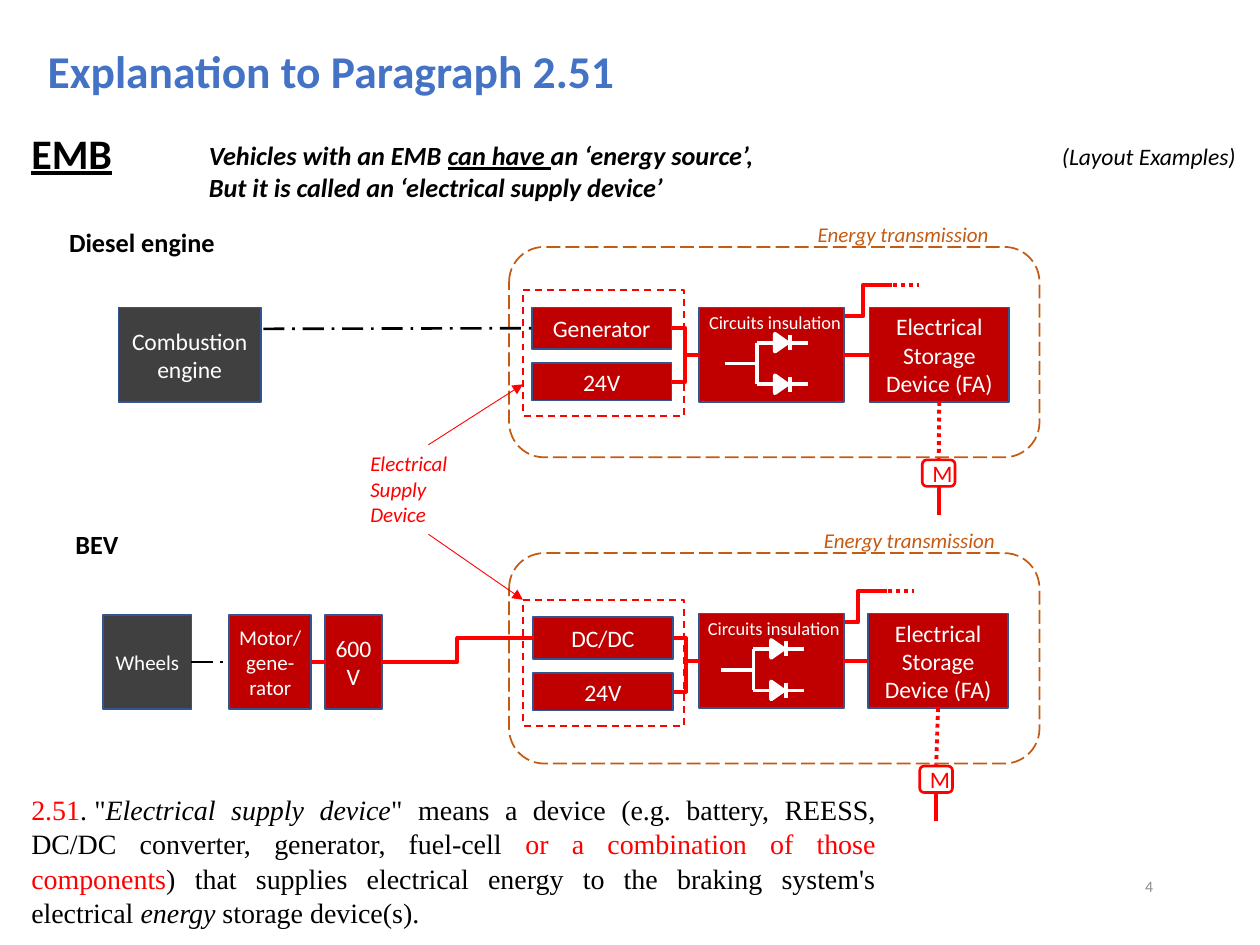
from lxml.etree import SubElement
from pptx import Presentation
from pptx.dml.color import RGBColor
from pptx.enum.dml import MSO_LINE
from pptx.enum.shapes import MSO_CONNECTOR, MSO_SHAPE
from pptx.enum.text import MSO_ANCHOR, MSO_AUTO_SIZE, PP_ALIGN
from pptx.oxml.ns import qn
from pptx.util import Inches, Pt

BLACK = RGBColor(0x00, 0x00, 0x00)
WHITE = RGBColor(0xFF, 0xFF, 0xFF)
RED = RGBColor(0xFF, 0x00, 0x00)
DARK_RED = RGBColor(0xC0, 0x00, 0x00)
DARK_GRAY = RGBColor(0x40, 0x40, 0x40)
PAGE_GRAY = RGBColor(0x8C, 0x8C, 0x8C)
BORDER_BLUE = RGBColor(0x32, 0x54, 0x91)
TITLE_BLUE = RGBColor(0x44, 0x72, 0xC4)
ORANGE = RGBColor(0xC5, 0x5A, 0x11)

TOP, LEFT, BOTTOM, RIGHT = 0, 1, 2, 3
DOTTED = MSO_LINE.ROUND_DOT  # written as sysDot


def style_run(run, size, color, bold=False, italic=False, underline=False,
              face="Calibri"):
    font = run.font
    font.name, font.size = face, Pt(size)
    font.bold, font.italic, font.underline = bold, italic, underline
    font.color.rgb = color


def add_label(slide, box, text, size, color, wrap=False, align=None,
              anchor=MSO_ANCHOR.TOP, grow=True, **style):
    """Add a text box; text is a string or one list of (text, style) per paragraph."""
    label = slide.shapes.add_textbox(*map(Inches, box))
    frame = label.text_frame
    frame.word_wrap = wrap
    frame.auto_size = MSO_AUTO_SIZE.SHAPE_TO_FIT_TEXT if grow else MSO_AUTO_SIZE.NONE
    frame.vertical_anchor = anchor
    paragraphs = [[(text, {})]] if isinstance(text, str) else text
    for index, pieces in enumerate(paragraphs):
        paragraph = frame.add_paragraph() if index else frame.paragraphs[0]
        paragraph.alignment = align
        for words, changes in pieces:
            run = paragraph.add_run()
            run.text = words
            style_run(run, **{"size": size, "color": color, **style, **changes})
    return label


def add_outline(shapes, kind, box, line, width, fill=None, dash=None):
    shape = shapes.add_shape(kind, *map(Inches, box))
    shape.shadow.inherit = False
    if fill is None:
        shape.fill.background()
    else:
        shape.fill.solid()
        shape.fill.fore_color.rgb = fill
    shape.line.color.rgb = line
    shape.line.width = Pt(width)
    if dash is not None:
        shape.line.dash_style = dash
    return shape


def write_centred(shape, text, size, color):
    frame = shape.text_frame
    frame.word_wrap = True
    frame.vertical_anchor = MSO_ANCHOR.MIDDLE
    frame.margin_left = frame.margin_right = Inches(0.07)
    frame.margin_top = frame.margin_bottom = Inches(0.04)
    frame.text = text
    frame.paragraphs[0].alignment = PP_ALIGN.CENTER
    style_run(frame.paragraphs[0].runs[0], size, color)


def add_block(slide, box, text="", size=13.5, fill=DARK_RED):
    block = add_outline(slide.shapes, MSO_SHAPE.RECTANGLE, box, BORDER_BLUE, 1, fill)
    if text:
        write_centred(block, text, size, WHITE)
    return block


def add_wire(shapes, start, end, color=RED, width=2.25, dash=None,
             kind=MSO_CONNECTOR.STRAIGHT, arrow=False):
    """Each end is an (x, y) point or a (block, side) pair to join."""
    joins = [not isinstance(place[0], (int, float)) for place in (start, end)]
    points = [(0, 0) if joined else place for joined, place in zip(joins, (start, end))]
    wire = shapes.add_connector(kind, *(Inches(v) for point in points for v in point))
    if joins[0]:
        wire.begin_connect(*start)
    if joins[1]:
        wire.end_connect(*end)
    wire.line.color.rgb = color
    wire.line.width = Pt(width)
    if dash is not None:
        wire.line.dash_style = dash
    if arrow:
        SubElement(wire.line._get_or_add_ln(), qn("a:tailEnd"), type="triangle")
    SubElement(wire._element.spPr, qn("a:effectLst"))
    return wire


def add_diode_pair(slide, left, top):
    """Two parallel diodes; top is the height of the upper branch."""
    shapes = slide.shapes.add_group_shape().shapes
    gap = 0.33
    fork, anode, cathode, end = left + 0.26, left + 0.4, left + 0.52, left + 0.66
    strokes = [((left, top + gap / 2), (fork, top + gap / 2)),
               ((fork, top), (fork, top + gap))]
    for y in (top, top + gap):
        diode = add_outline(shapes, MSO_SHAPE.ISOSCELES_TRIANGLE,
                            (left + 0.38, y - 0.05, 0.14, 0.1), WHITE, 2.25, WHITE)
        diode.rotation = 90
        strokes += [((fork, y), (anode, y)), ((cathode, y), (end, y)),
                    ((cathode, y - 0.06), (cathode, y + 0.06))]
    for start, finish in strokes:
        add_wire(shapes, start, finish, WHITE)


def add_outlet(slide, left, top):
    """Stepped wire that leaves the circuits and runs on as dots."""
    shapes = slide.shapes.add_group_shape().shapes
    steps = [(0, 0.25), (0.16, 0.25), (0.16, 0), (0.39, 0)]
    points = [(Inches(left + x), Inches(top + y)) for x, y in steps]
    builder = shapes.build_freeform(*points[0])
    builder.add_line_segments(points[1:], close=False)
    step = builder.convert_to_shape()
    step.shadow.inherit = False
    step.fill.background()
    step.line.color.rgb = RED
    step.line.width = Pt(2.25)
    add_wire(shapes, (left + 0.4, top), (left + 0.6, top), dash=DOTTED)


def add_motor(slide, storage, left, top):
    motor = add_outline(slide.shapes, MSO_SHAPE.ROUNDED_RECTANGLE,
                        (left, top, 0.26, 0.21), RED, 1.5)
    write_centred(motor, "M", 13.5, RED)
    add_wire(slide.shapes, (storage, BOTTOM), (motor, TOP), dash=DOTTED)
    add_wire(slide.shapes, (motor, BOTTOM), (left + 0.13, top + 0.44))


def add_transmission(slide, top, source, supply_left, supply_top, storage_left,
                     label_left, insulation_left, outlet_left, diode_left, motor_left):
    """Draw one energy transmission frame and return its upper supply block."""
    shapes = slide.shapes
    block_top = top + 0.48
    add_outlet(slide, outlet_left, top + 0.3)
    circuits = add_block(slide, (5.55, block_top, 1.15, 0.75))
    storage = add_block(slide, (storage_left, block_top, 1.11, 0.75),
                        "Electrical Storage Device (FA)")
    add_wire(shapes, (circuits, RIGHT), (storage, LEFT))
    add_diode_pair(slide, diode_left, top + 0.76)
    add_label(slide, (insulation_left, top + 0.46, 1.26, 0.28),
              "Circuits insulation", 10.5, WHITE)
    add_motor(slide, storage, motor_left, top + 1.69)
    add_outline(shapes, MSO_SHAPE.ROUNDED_RECTANGLE, (4.04, top, 4.21, 1.67),
                ORANGE, 1, dash=MSO_LINE.LONG_DASH)
    add_outline(shapes, MSO_SHAPE.RECTANGLE, (4.15, supply_top, 1.28, 1),
                RED, 1, dash=MSO_LINE.DASH)
    upper = add_block(slide, (supply_left, supply_top + 0.14, 1.11, 0.33), source)
    lower = add_block(slide, (supply_left, supply_top + 0.58, 1.11, 0.3), "24V")
    for supply in (upper, lower):
        add_wire(shapes, (supply, RIGHT), (circuits, LEFT), kind=MSO_CONNECTOR.ELBOW)
    add_label(slide, (label_left, top - 0.25, 1.73, 0.3), "Energy transmission",
              12, ORANGE, wrap=True, italic=True)
    return upper


def add_texts(slide):
    title = add_label(slide, (0.28, 0.09, 7.72, 0.94), "Explanation to Paragraph 2.51",
                      26, TITLE_BLUE, wrap=True, anchor=MSO_ANCHOR.MIDDLE, grow=False,
                      bold=True)
    title.text_frame.paragraphs[0].space_after = Pt(12)
    add_label(slide, (0.15, 0.96, 0.85, 0.5), "EMB", 24, BLACK, bold=True, underline=True)
    add_label(slide, (1.56, 1.06, 4.55, 0.61),
              [[("Vehicles with an EMB ", {}), ("can have ", {"underline": True}),
                ("an ‘energy source’,", {})],
               [("But it is called an ‘electrical supply device’", {})]],
              15, BLACK, bold=True, italic=True)
    add_label(slide, (8.33, 1.08, 1.6, 0.33), "(Layout Examples)", 13.5, BLACK, italic=True)
    add_label(slide, (0.45, 1.75, 1.36, 0.35), "Diesel engine", 15, BLACK, bold=True)
    add_label(slide, (0.5, 4.14, 0.55, 0.35), "BEV", 15, BLACK, bold=True)
    add_label(slide, (2.84, 3.53, 1.12, 0.71), "Electrical Supply Device", 12, RED,
              wrap=True, italic=True)
    definition = add_label(
        slide, (0.15, 6.23, 6.9, 1.18),
        [[("2.51", {"color": RED}), (".\t\"", {}),
          ("Electrical supply device", {"italic": True}),
          ("\" means a device (e.g. battery, REESS, DC/DC converter, generator, fuel-cell ", {}),
          ("or a combination of those components", {"color": RED}),
          (") that supplies electrical energy to the braking system's electrical ", {}),
          ("energy ", {"italic": True}), ("storage device(s).", {})]],
        16, BLACK, wrap=True, align=PP_ALIGN.JUSTIFY, face="Times New Roman")
    definition.text_frame.paragraphs[0].space_after = Pt(3)
    definition.text_frame.paragraphs[0].line_spacing = 1.03
    add_label(slide, (7, 6.83, 2.25, 0.4), "4", 9, PAGE_GRAY, wrap=True,
              align=PP_ALIGN.RIGHT, anchor=MSO_ANCHOR.MIDDLE, grow=False)


def main():
    deck = Presentation()
    deck.slide_width, deck.slide_height = Inches(10), Inches(7.5)
    slide = deck.slides.add_slide(deck.slide_layouts[6])
    shapes = slide.shapes

    generator = add_transmission(
        slide, 1.96, "Generator", supply_left=4.22, supply_top=2.3, storage_left=6.9,
        label_left=6.39, insulation_left=5.53, outlet_left=6.69, diode_left=5.75,
        motor_left=7.32)
    add_block(slide, (0.94, 2.44, 1.13, 0.75), "Combustion engine", fill=DARK_GRAY)
    add_wire(shapes, (2.09, 2.61), (generator, LEFT), BLACK, 1.5, MSO_LINE.LONG_DASH_DOT)

    converter = add_transmission(
        slide, 4.39, "DC/DC", supply_left=4.23, supply_top=4.76, storage_left=6.89,
        label_left=6.44, insulation_left=5.52, outlet_left=6.65, diode_left=5.72,
        motor_left=7.3)
    wheels = add_block(slide, (0.82, 4.88, 0.7, 0.75), "Wheels", 12, DARK_GRAY)
    motor_generator = add_block(slide, (1.82, 4.88, 0.65, 0.75), "Motor/ gene-rator", 12)
    battery = add_block(slide, (2.58, 4.88, 0.45, 0.75), "600V")
    add_wire(shapes, (wheels, RIGHT), (motor_generator, LEFT), BLACK, 1.5,
             MSO_LINE.LONG_DASH_DOT)
    add_wire(shapes, (motor_generator, RIGHT), (battery, LEFT))
    add_wire(shapes, (battery, RIGHT), (converter, LEFT), kind=MSO_CONNECTOR.ELBOW)

    add_texts(slide)
    for start, end in [((3.4, 3.53), (4.15, 3.05)), ((3.4, 4.24), (4.15, 4.76))]:
        add_wire(shapes, start, end, width=0.5, arrow=True)
    deck.save("out.pptx")


if __name__ == "__main__":
    main()
